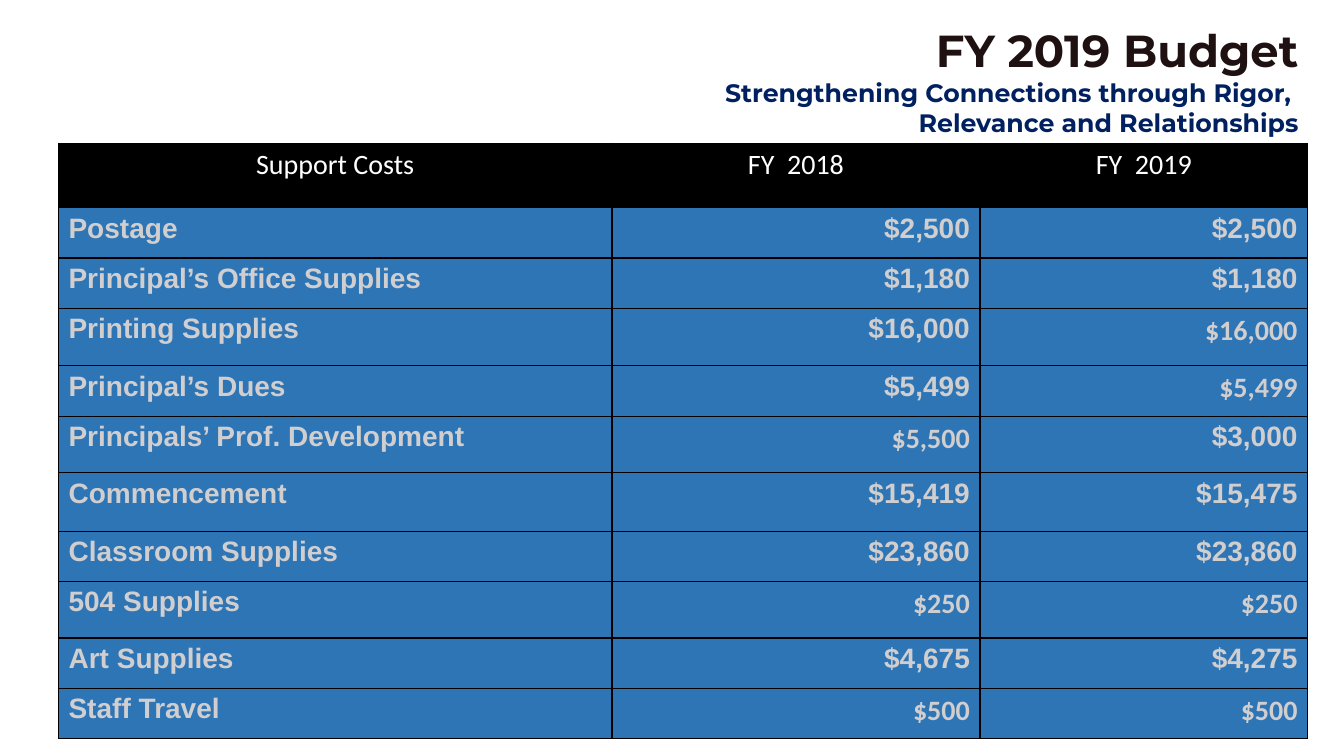
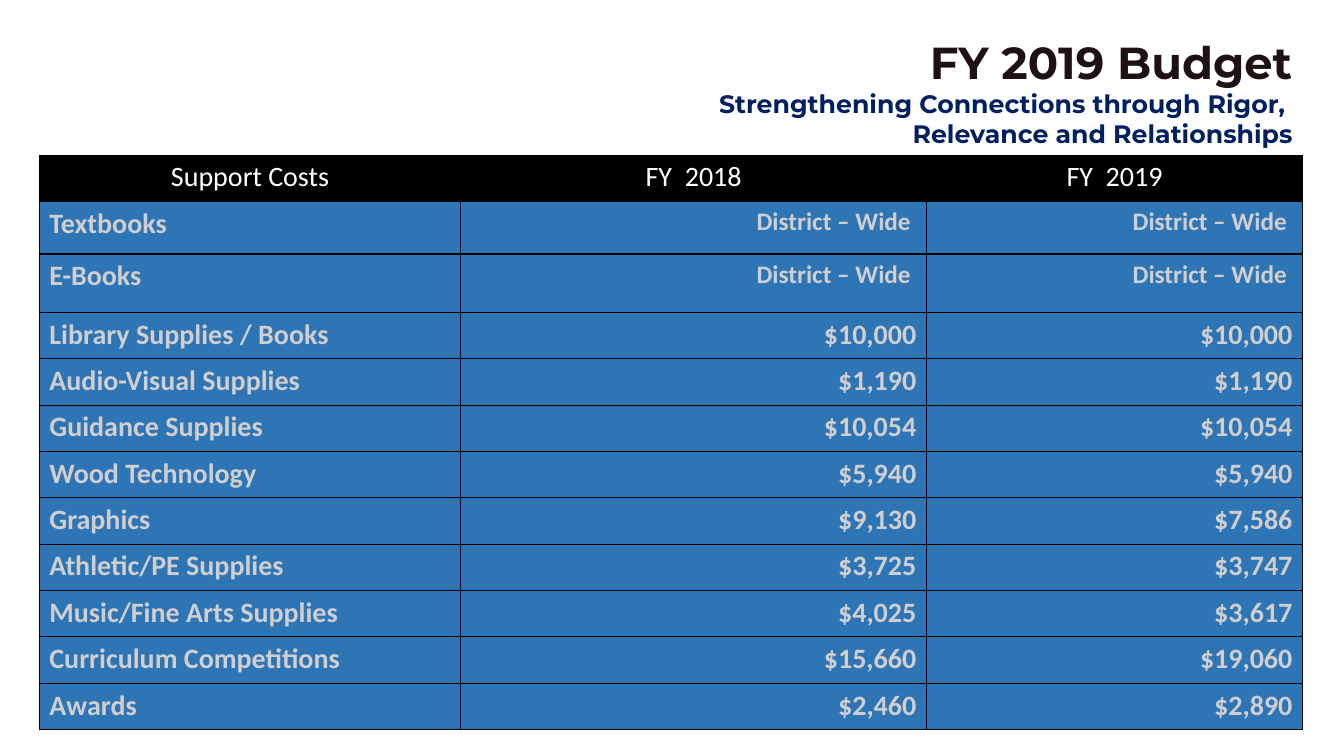
from lxml import etree
from pptx import Presentation
from pptx.dml.color import RGBColor
from pptx.enum.text import MSO_ANCHOR, MSO_AUTO_SIZE, PP_ALIGN
from pptx.oxml.ns import qn
from pptx.util import Inches, Pt

LEFT, CENTER, RIGHT = PP_ALIGN.LEFT, PP_ALIGN.CENTER, PP_ALIGN.RIGHT
TOP = MSO_ANCHOR.TOP
FIT_SHAPE = MSO_AUTO_SIZE.SHAPE_TO_FIT_TEXT

BLACK = RGBColor(0x00, 0x00, 0x00)
WHITE = RGBColor(0xFF, 0xFF, 0xFF)
TITLE_INK = RGBColor(0x1F, 0x11, 0x11)
NAVY = RGBColor(0x00, 0x20, 0x60)
BLUE = RGBColor(0x2E, 0x75, 0xB6)
SILVER = RGBColor(0xD0, 0xCE, 0xCE)

TITLE_LINES = [
    ("FY 2019 Budget", 32, TITLE_INK),
    ("Strengthening Connections through Rigor, ", 18, NAVY),
    ("Relevance and Relationships", 18, NAVY),
]
HEADER = ("Support Costs", "FY  2018", "FY  2019")
WIDE = "District – Wide "

# One entry per slide; calibri_cells lists (row, column) exceptions to the body font
BUDGET_PAGES = [
    {
        "title_at": (6.31, 0.18),
        "table_at": (0.58, 1.42),
        "columns": [5.49, 3.65, 3.25],
        "heights": [0.64, 0.5, 0.5, 0.57, 0.5, 0.56, 0.58, 0.5, 0.56, 0.5, 0.5],
        "body_font": "Arial",
        "calibri_cells": {(3, 2), (4, 2), (5, 1), (8, 1), (8, 2), (10, 1), (10, 2)},
        "costs": [
            ("Postage", "$2,500", "$2,500"),
            ("Principal’s Office Supplies", "$1,180", "$1,180"),
            ("Printing Supplies", "$16,000", "$16,000"),
            ("Principal’s Dues", "$5,499", "$5,499"),
            ("Principals’ Prof. Development", "$5,500", "$3,000"),
            ("Commencement", "$15,419", "$15,475"),
            ("Classroom Supplies", "$23,860", "$23,860"),
            ("504 Supplies", "$250", "$250"),
            ("Art Supplies", "$4,675", "$4,275"),
            ("Staff Travel", "$500", "$500"),
        ],
    },
    {
        "title_at": (6.25, 0.29),
        "table_at": (0.39, 1.54),
        "columns": [4.18, 4.62, 3.73],
        "heights": [0.46, 0.52, 0.58] + [0.46] * 9,
        "body_font": "Calibri",
        "calibri_cells": set(),
        "costs": [
            ("Textbooks", WIDE, WIDE),
            ("E-Books", WIDE, WIDE),
            ("Library Supplies / Books", "$10,000", "$10,000"),
            ("Audio-Visual Supplies", "$1,190", "$1,190"),
            ("Guidance Supplies", "$10,054", "$10,054"),
            ("Wood Technology", "$5,940", "$5,940"),
            ("Graphics", "$9,130", "$7,586"),
            ("Athletic/PE Supplies", "$3,725", "$3,747"),
            ("Music/Fine Arts Supplies", "$4,025", "$3,617"),
            ("Curriculum Competitions", "$15,660", "$19,060"),
            ("Awards", "$2,460", "$2,890"),
        ],
    },
]


def style_paragraph(para, align, font_name, size, color, bold):
    para.alignment = align
    para.font.name = font_name
    para.font.size = Pt(size)
    para.font.color.rgb = color
    para.font.bold = bold


def add_borders(cell):
    """Draw a 1 pt black line on every side; call before filling the cell."""
    properties = cell._tc.get_or_add_tcPr()
    for side in ("a:lnL", "a:lnR", "a:lnT", "a:lnB"):
        line = etree.SubElement(properties, qn(side), w=str(Pt(1)))
        fill = etree.SubElement(line, qn("a:solidFill"))
        etree.SubElement(fill, qn("a:srgbClr"), val=str(BLACK))


deck = Presentation()
deck.slide_width, deck.slide_height = Inches(13.33), Inches(7.5)
title_only = deck.slide_layouts[5]

for budget in BUDGET_PAGES:
    page = deck.slides.add_slide(title_only)

    # Title and motto
    title = page.shapes.title
    title.left, title.top = [Inches(value) for value in budget["title_at"]]
    title.width, title.height = Inches(6.67), Inches(1.25)
    frame = title.text_frame
    frame.word_wrap = True
    frame.auto_size = FIT_SHAPE
    frame.vertical_anchor = TOP
    frame.text = "\n".join(text for text, _, _ in TITLE_LINES)
    for para, (_, size, color) in zip(frame.paragraphs, TITLE_LINES):
        style_paragraph(para, RIGHT, "Montserrat", size, color, True)

    # Cost table
    rows = [HEADER] + budget["costs"]
    left, top = budget["table_at"]
    table = page.shapes.add_table(
        len(rows), len(HEADER), Inches(left), Inches(top),
        Inches(sum(budget["columns"])), Inches(sum(budget["heights"])),
    ).table
    for column, width in zip(table.columns, budget["columns"]):
        column.width = Inches(width)
    for row, height in zip(table.rows, budget["heights"]):
        row.height = Inches(height)

    for row_index, row_texts in enumerate(rows):
        for column_index, text in enumerate(row_texts):
            cell = table.cell(row_index, column_index)
            add_borders(cell)
            cell.fill.solid()
            cell.text = text
            para = cell.text_frame.paragraphs[0]
            if row_index == 0:
                cell.fill.fore_color.rgb = BLACK
                style_paragraph(para, CENTER, "Calibri", 20, WHITE, False)
                continue
            cell.fill.fore_color.rgb = BLUE
            is_calibri = (row_index, column_index) in budget["calibri_cells"]
            font_name = "Calibri" if is_calibri else budget["body_font"]
            align = LEFT if column_index == 0 else RIGHT
            size = 18 if text == WIDE else 20
            style_paragraph(para, align, font_name, size, SILVER, True)

deck.save("out.pptx")
